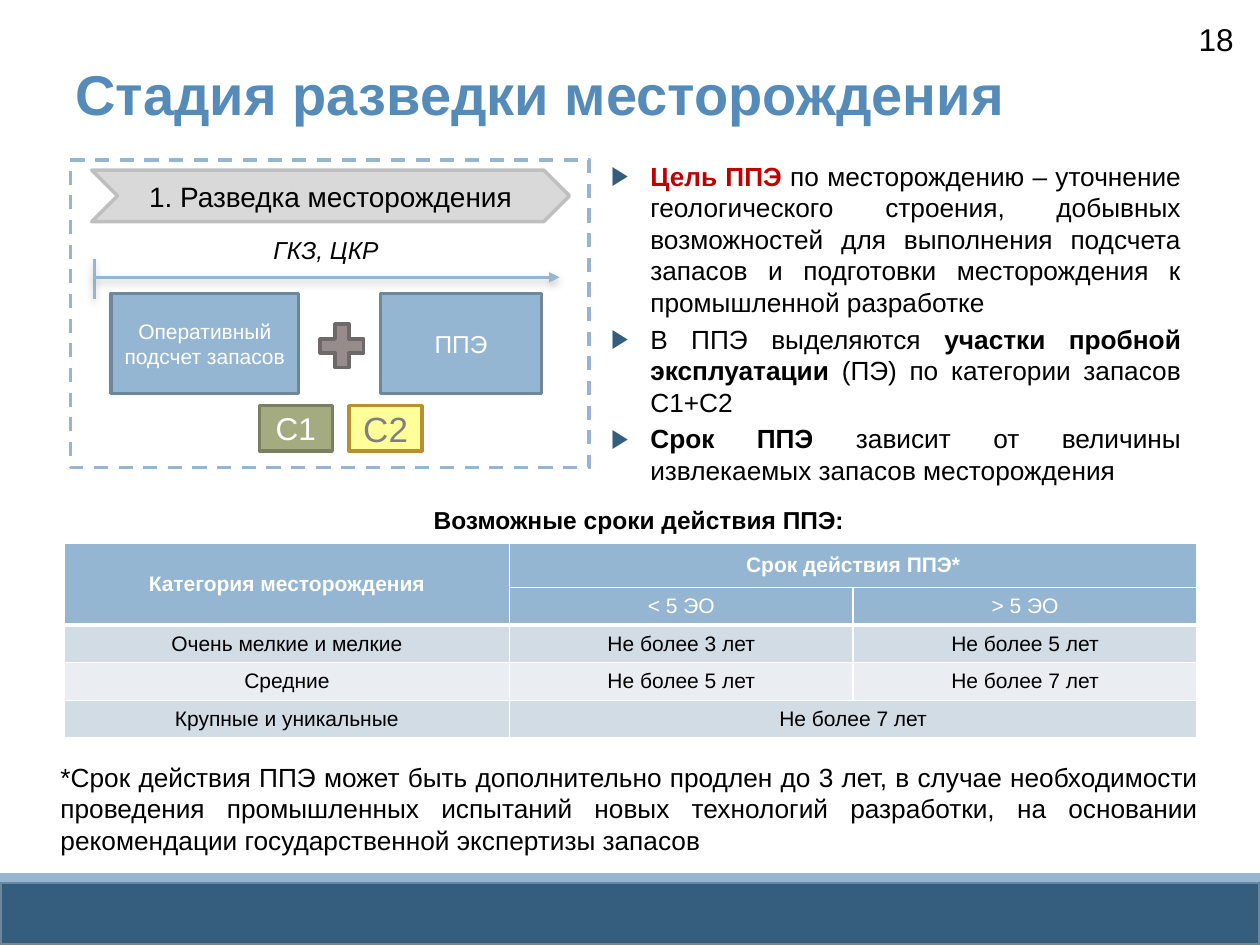
from lxml import etree
from pptx import Presentation
from pptx.dml.color import RGBColor
from pptx.enum.dml import MSO_LINE
from pptx.enum.shapes import MSO_CONNECTOR, MSO_SHAPE
from pptx.enum.text import MSO_ANCHOR, MSO_AUTO_SIZE, PP_ALIGN
from pptx.oxml.ns import qn
from pptx.util import Cm, Pt

RECT, CHEVRON, PLUS = MSO_SHAPE.RECTANGLE, MSO_SHAPE.CHEVRON, MSO_SHAPE.MATH_PLUS
LEFT, RIGHT = PP_ALIGN.LEFT, PP_ALIGN.RIGHT
CENTER, JUSTIFY = PP_ALIGN.CENTER, PP_ALIGN.JUSTIFY
TOP, MIDDLE = MSO_ANCHOR.TOP, MSO_ANCHOR.MIDDLE
DASH = MSO_LINE.DASH

COLORS = {
    "black": "000000", "white": "FFFFFF", "title": "558BB8", "red": "C00000",
    "navy": "355D7E", "blue": "94B6D2", "slate": "6D879B",
    "silver": "D9D9D9", "gray": "BFBFBF", "text": "808080",
    "olive": "A5AB81", "moss": "7A7F5F", "yellow": "FFFF99", "gold": "BA8F2D",
    "taupe": "968C8C", "umber": "6F6868", "band": "D2DCE5", "pale": "EAEEF3",
}

POINTS = [
    [("Цель ППЭ ", True, "red"),
     ("по месторождению – уточнение геологического строения, добывных "
      "возможностей для выполнения подсчета запасов и подготовки "
      "месторождения к промышленной разработке", False, "black")],
    [("В ППЭ выделяются ", False, "black"),
     ("участки пробной эксплуатации", True, "black"),
     (" (ПЭ) по категории запасов С1+С2", False, "black")],
    [("Срок ППЭ ", True, "black"),
     ("зависит от величины извлекаемых запасов месторождения", False, "black")],
]

ROWS = [
    ["Категория месторождения", "Срок действия ППЭ*", ""],
    ["", "< 5 ЭО", "> 5 ЭО"],
    ["Очень мелкие и мелкие", "Не более 3 лет", "Не более 5 лет"],
    ["Средние", "Не более 5 лет", "Не более 7 лет"],
    ["Крупные и уникальные", "Не более 7 лет", ""],
]
MERGES = [((0, 0), (1, 0)), ((0, 1), (0, 2)), ((4, 1), (4, 2))]
FILLS = ["blue", "blue", "band", "pale", "band"]
HEADS = 2

NOTE = ("*Срок действия ППЭ может быть дополнительно продлен до 3 лет, в случае "
        "необходимости проведения промышленных испытаний новых технологий "
        "разработки, на основании рекомендации государственной экспертизы запасов")


def rgb(name):
    return RGBColor.from_string(COLORS[name])


def sub(parent, tag, **attrs):
    """Append a DrawingML child element."""
    return etree.SubElement(parent, qn(f"a:{tag}"), attrs)


class Deck:
    font = "Arial"

    def __init__(self):
        self.prs = Presentation()
        self.prs.slide_width, self.prs.slide_height = Cm(25.4), Cm(19.05)
        self.slide = self.prs.slides.add_slide(self.prs.slide_layouts[1])
        self.shapes = self.slide.shapes

    def style(self, para, size, color="black", align=LEFT, bold=False, italic=False):
        para.alignment = align
        font = para.font
        font.name, font.size = self.font, Pt(size)
        font.bold, font.italic = bold, italic
        font.color.rgb = rgb(color)

    def frame(self, shape, anchor=TOP, side=0.25, top=0.13):
        frame = shape.text_frame
        frame.word_wrap = True
        frame.auto_size = MSO_AUTO_SIZE.NONE
        frame.vertical_anchor = anchor
        frame.margin_left = frame.margin_right = Cm(side)
        frame.margin_top, frame.margin_bottom = Cm(top), Cm(0.13)
        return frame

    def place(self, shape, box):
        shape.left, shape.top, shape.width, shape.height = map(Cm, box)

    def title(self, box, text):
        shape = self.shapes.title
        self.place(shape, box)
        frame = self.frame(shape, top=0.23)
        frame.text = text
        self.style(frame.paragraphs[0], 32, "title", bold=True)

    def bullets(self, box, points, size):
        shape = self.slide.placeholders[1]
        self.place(shape, box)
        frame = self.frame(shape)
        for i, runs in enumerate(points):
            para = frame.add_paragraph() if i else frame.paragraphs[0]
            props = para._p.get_or_add_pPr()
            props.set("marL", str(Cm(0.79)))
            props.set("indent", str(Cm(-0.79)))
            para.space_before, para.space_after = Pt(0), Pt(3)
            sub(sub(props, "buClr"), "srgbClr", val=COLORS["navy"])
            sub(props, "buFont", typeface=self.font)
            sub(props, "buChar", char="▶")
            self.style(para, size, align=JUSTIFY)
            for text, bold, color in runs:
                run = para.add_run()
                run.text = text
                run.font.bold = bold
                run.font.color.rgb = rgb(color)

    def text(self, box, text, size, anchor=TOP, side=0.25, **look):
        frame = self.frame(self.shapes.add_textbox(*map(Cm, box)), anchor, side)
        frame.text = text
        self.style(frame.paragraphs[0], size, **look)

    def shape(self, kind, box, fill, line=None, text="", size=14, color="white",
              dash=None):
        shape = self.shapes.add_shape(kind, *map(Cm, box))
        shape.shadow.inherit = False
        shape.fill.solid()
        shape.fill.fore_color.rgb = rgb(fill)
        if line:
            shape.line.color.rgb = rgb(line)
            shape.line.width = Pt(2)
            shape.line.dash_style = dash
        else:
            shape.line.fill.background()
        if text:
            frame = self.frame(shape, MIDDLE, side=0)
            frame.text = text
            self.style(frame.paragraphs[0], size, color, CENTER)

    def line(self, start, end, arrow=False):
        line = self.shapes.add_connector(
            MSO_CONNECTOR.STRAIGHT, *map(Cm, start + end))
        line.line.color.rgb = rgb("blue")
        line.line.width = Pt(1.5)
        if arrow:
            sub(line.line._get_or_add_ln(), "tailEnd", type="triangle")
        shade = sub(sub(line._element.spPr, "effectLst"), "outerShdw",
                    blurRad=str(Pt(4.1)), dist=str(Pt(2)), dir="5400000",
                    rotWithShape="0")
        sub(sub(shade, "srgbClr", val=COLORS["text"]), "alpha", val="40000")

    def edges(self, cell, thick):
        """Draw white cell borders; sides named in thick are heavier."""
        props = cell._tc.get_or_add_tcPr()
        for side in "LRTB":
            width = Pt(3 if side in thick else 1)
            edge = sub(props, f"ln{side}", w=str(width))
            sub(sub(edge, "solidFill"), "srgbClr", val=COLORS["white"])

    def table(self, box, cols, heights):
        table = self.shapes.add_table(len(ROWS), len(cols), *map(Cm, box)).table
        table.first_row = table.horz_banding = False
        for col, width in zip(table.columns, cols):
            col.width = Cm(width)
        for row, height in zip(table.rows, heights):
            row.height = Cm(height)
        for start, end in MERGES:
            table.cell(*start).merge(table.cell(*end))
        for r, texts in enumerate(ROWS):
            for c, text in enumerate(texts):
                cell = table.cell(r, c)
                under = r == HEADS - 1 or (r, c) == (0, 0)
                self.edges(cell, "B" if under else "T" if r == HEADS else "")
                cell.fill.solid()
                cell.fill.fore_color.rgb = rgb(FILLS[r])
                cell.vertical_anchor = MIDDLE
                cell.margin_left = cell.margin_right = Cm(0.13)
                cell.margin_top = cell.margin_bottom = Cm(0.13)
                cell.text = text
                self.style(cell.text_frame.paragraphs[0], 12,
                           "white" if r < HEADS else "black", CENTER, bold=r == 0)


def main():
    deck = Deck()
    deck.shape(RECT, (0, 17.78, 25.4, 1.27), "navy", "slate")
    deck.shape(RECT, (0, 17.6, 25.4, 0.18), "blue")
    deck.text((22.38, 0.28, 2.74, 1.02), "18", 18, align=RIGHT)
    deck.title((1.27, 0.97, 22.86, 1.37), "Стадия разведки месторождения")
    deck.bullets((12.07, 3.1, 11.99, 6.88), POINTS, 15)

    deck.shape(RECT, (1.42, 3.23, 10.46, 6.2), "white", "blue", dash=DASH)
    deck.shape(CHEVRON, (1.85, 3.43, 9.63, 1.04), "silver", "gray",
               "1. Разведка месторождения", 16, "black")
    deck.text((2.08, 4.62, 8.99, 0.84), "ГКЗ, ЦКР", 14, MIDDLE, 0,
              align=CENTER, italic=True)
    deck.line((1.9, 5.23), (1.9, 6.02))
    deck.line((1.88, 5.59), (11.28, 5.59), arrow=True)
    deck.shape(RECT, (2.24, 5.92, 3.78, 2.01), "blue", "slate",
               "Оперативный подсчет запасов", 12)
    deck.shape(PLUS, (6.3, 6.38, 1.19, 1.19), "taupe", "umber")
    deck.shape(RECT, (7.67, 5.92, 3.25, 2.01), "blue", "slate", "ППЭ", 14)
    deck.shape(RECT, (5.23, 8.18, 1.47, 0.91), "olive", "moss", "С1", 18)
    deck.shape(RECT, (7.04, 8.18, 1.47, 0.91), "yellow", "gold", "С2", 20, "text")

    deck.text((1.3, 10.06, 23.16, 0.86), "Возможные сроки действия ППЭ:", 14,
              align=CENTER, bold=True)
    deck.table((1.3, 10.95, 22.83, 3.93), [8.97, 6.93, 6.93], [0.89] + [0.76] * 4)
    deck.text((0.97, 15.21, 23.44, 2.18), NOTE, 15, align=JUSTIFY)
    deck.prs.save("out.pptx")


if __name__ == "__main__":
    main()
